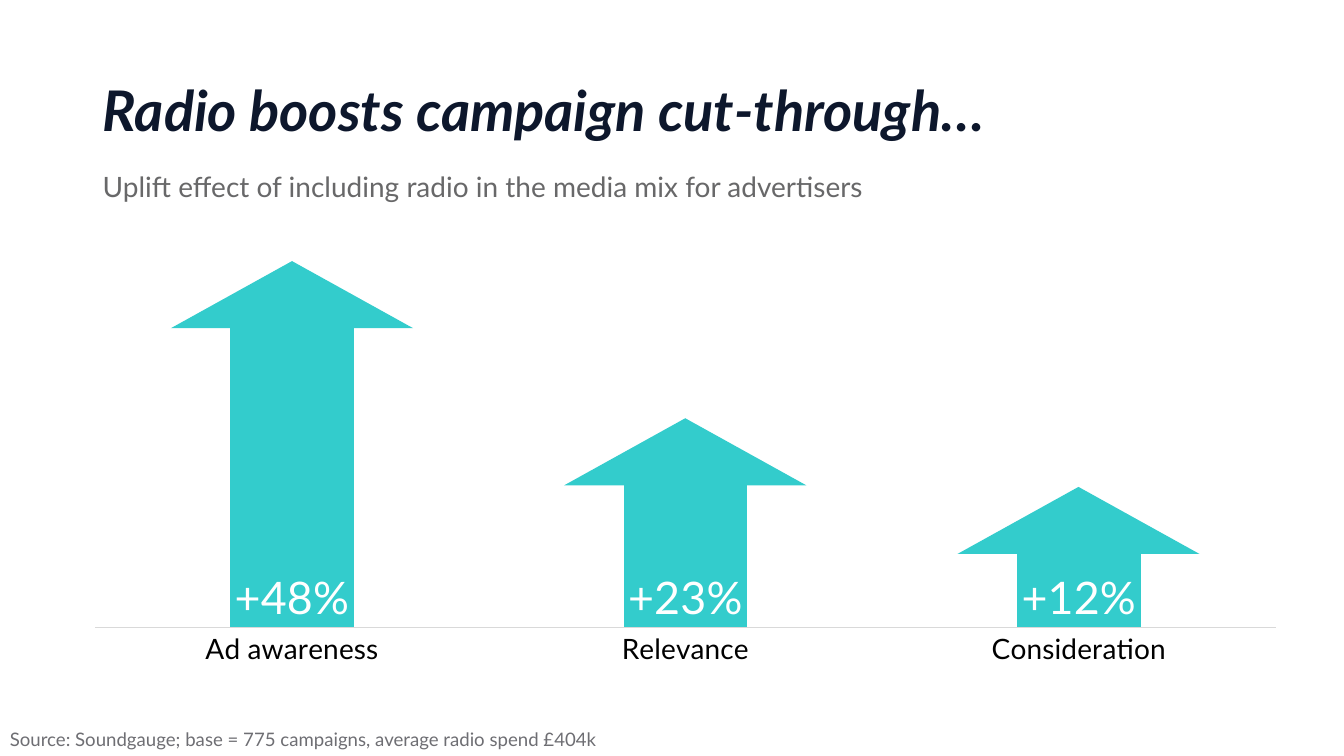
"""Build a slide showing how radio lifts three campaign measures."""
from lxml.etree import SubElement
from pptx import Presentation
from pptx.chart.data import CategoryChartData
from pptx.dml.color import RGBColor
from pptx.enum.chart import XL_CHART_TYPE, XL_LABEL_POSITION, XL_TICK_MARK
from pptx.enum.shapes import MSO_SHAPE
from pptx.enum.text import MSO_ANCHOR
from pptx.oxml.ns import qn
from pptx.util import Cm, Pt

COLORS = {
    "title": "0D172C",
    "subtitle": "686869",
    "source": "6E6E73",
    "uplift": "33CCCC",
    "axis": "D9D9D9",
    "category": "000000",
    "value": "FFFFFF",
}
UPLIFTS = {"Ad awareness": 0.48, "Relevance": 0.23, "Consideration": 0.12}
ARROW_TOPS = [6.58, 10.54, 12.27]
PLOT_AREA = {"x": 0.013, "y": 0.032, "w": 0.987, "h": 0.848}


class SlideBuilder:
    def __init__(self, slide, font_name="Lato"):
        self.slide = slide
        self.font_name = font_name

    def color(self, name):
        return RGBColor.from_string(COLORS[name])

    def style_font(self, font, size, color, strong=False):
        font.name = self.font_name
        font.size = Pt(size)
        font.color.rgb = self.color(color)
        font.bold = font.italic = strong

    def text(self, words, box, size, color, strong=False, wrap=True,
             anchor=MSO_ANCHOR.TOP, line_spacing=1.0, before=0, after=0):
        shape = self.slide.shapes.add_textbox(*map(Cm, box))
        frame = shape.text_frame
        frame.word_wrap = wrap
        frame.vertical_anchor = anchor
        paragraph = frame.paragraphs[0]
        paragraph.line_spacing = line_spacing
        paragraph.space_before = Pt(before)
        paragraph.space_after = Pt(after)
        run = paragraph.add_run()
        run.text = words
        self.style_font(run.font, size, color, strong)

    def arrow(self, column):
        shape = self.slide.shapes.add_shape(
            MSO_SHAPE.UP_ARROW, Cm(4.31 + 9.91 * column), Cm(ARROW_TOPS[column]),
            Cm(6.1), Cm(3.38))
        shape.shadow.inherit = False
        shape.fill.solid()
        shape.fill.fore_color.rgb = self.color("uplift")
        shape.line.fill.background()

    def column_chart(self, box):
        data = CategoryChartData(number_format="0%")
        data.categories = list(UPLIFTS)
        data.add_series("Series 1", list(UPLIFTS.values()))
        chart = self.slide.shapes.add_chart(
            XL_CHART_TYPE.COLUMN_CLUSTERED, *map(Cm, box), data).chart
        chart.has_legend = False
        chart.has_title = False
        self.style_font(chart.font, 10, "category")
        self.style_axes(chart)
        self.style_columns(chart.plots[0])
        self.place_plot(chart)
        self.clear_background(chart)

    def style_axes(self, chart):
        category_axis = chart.category_axis
        category_axis.major_tick_mark = XL_TICK_MARK.NONE
        category_axis.minor_tick_mark = XL_TICK_MARK.NONE
        category_axis.format.line.color.rgb = self.color("axis")
        category_axis.format.line.width = Pt(0.75)
        self.style_font(category_axis.tick_labels.font, 20, "category")
        value_axis = chart.value_axis
        value_axis.visible = False
        value_axis.has_major_gridlines = False
        value_axis.minimum_scale = 0
        value_axis.maximum_scale = 0.6

    def style_columns(self, plot):
        plot.vary_by_categories = False
        plot.gap_width = 219
        plot.overlap = -27
        series = plot.series[0]
        series.format.fill.solid()
        series.format.fill.fore_color.rgb = self.color("uplift")
        labels = series.data_labels
        labels.show_value = True
        labels.position = XL_LABEL_POSITION.INSIDE_BASE
        labels.number_format = "+0%"
        labels.number_format_is_linked = False
        self.style_font(labels.font, 32, "value")

    def place_plot(self, chart):
        plot_area = chart.plots[0]._element.getparent()
        layout = plot_area.find(qn("c:layout"))
        if layout is None:
            layout = SubElement(plot_area, qn("c:layout"))
            plot_area.insert(0, layout)
        manual = SubElement(layout, qn("c:manualLayout"))
        settings = {"layoutTarget": "inner", "xMode": "edge", "yMode": "edge"}
        for tag, value in {**settings, **PLOT_AREA}.items():
            SubElement(manual, qn(f"c:{tag}")).set("val", str(value))

    def clear_background(self, chart):
        plot_area = chart.plots[0]._element.getparent()
        chart_body = plot_area.getparent()
        chart_space = chart_body.getparent()
        for parent in (plot_area, chart_space):
            properties = SubElement(parent, qn("c:spPr"))
            SubElement(properties, qn("a:noFill"))
            SubElement(SubElement(properties, qn("a:ln")), qn("a:noFill"))
        chart_body.addnext(properties)


def main():
    presentation = Presentation()
    presentation.slide_width = Cm(33.87)
    presentation.slide_height = Cm(19.05)
    slide = presentation.slides.add_slide(presentation.slide_layouts[6])
    builder = SlideBuilder(slide)
    for column in range(len(UPLIFTS)):
        builder.arrow(column)
    builder.column_chart((2.01, 6.02, 30.15, 11.13))
    builder.text("Radio boosts campaign cut-through…", (2.34, 1.37, 29.21, 2.97),
                 40, "title", strong=True, anchor=MSO_ANCHOR.MIDDLE,
                 line_spacing=0.9)
    builder.text("Uplift effect of including radio in the media mix for advertisers",
                 (2.34, 3.99, 28.45, 1.65), 20, "subtitle",
                 line_spacing=1.2, before=10, after=0.3)
    builder.text("Source: Soundgauge; base = 775 campaigns, average radio spend £404k",
                 (0, 18.21, 16.26, 0.84), 13.3, "source", wrap=False)
    presentation.save("out.pptx")


if __name__ == "__main__":
    main()
